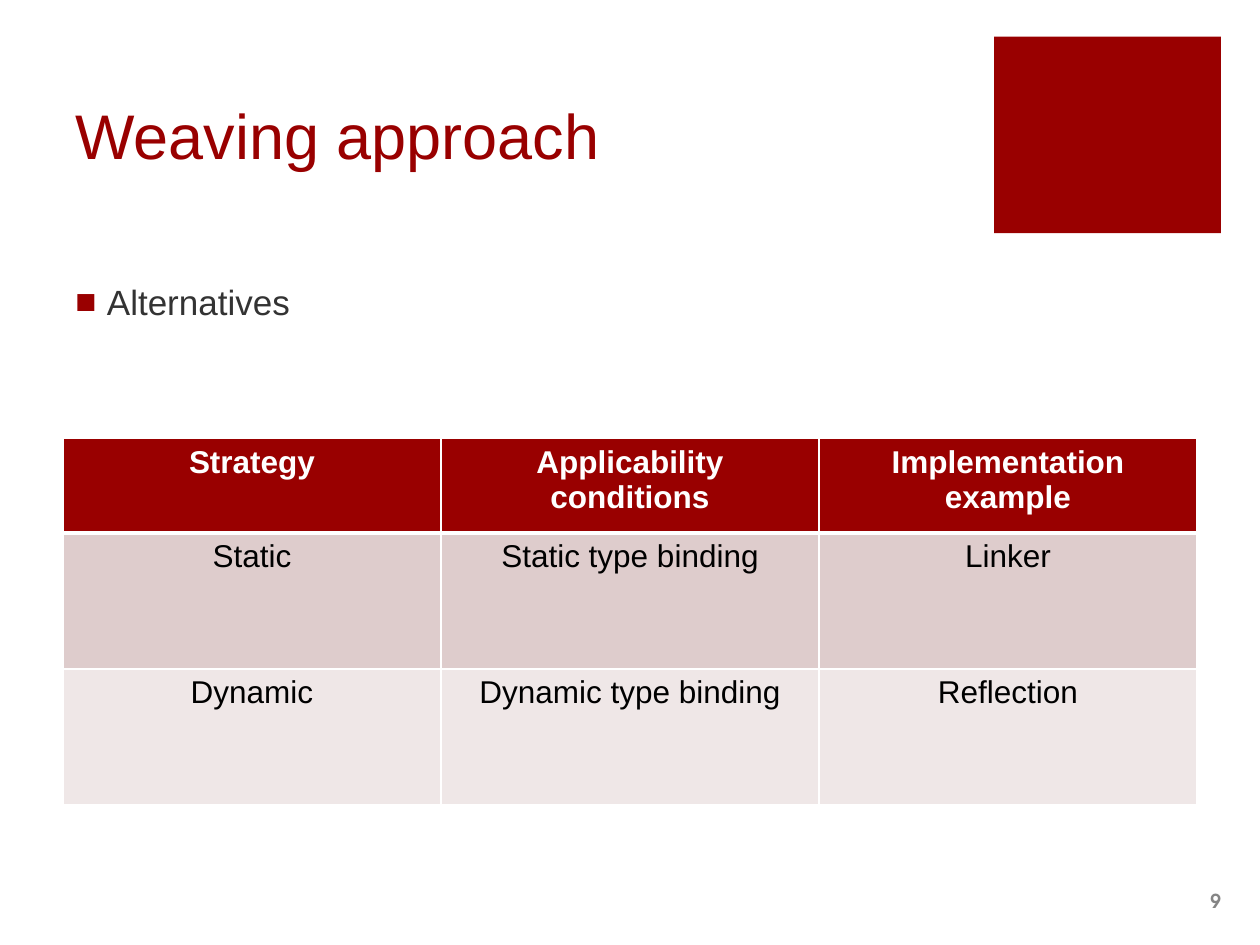
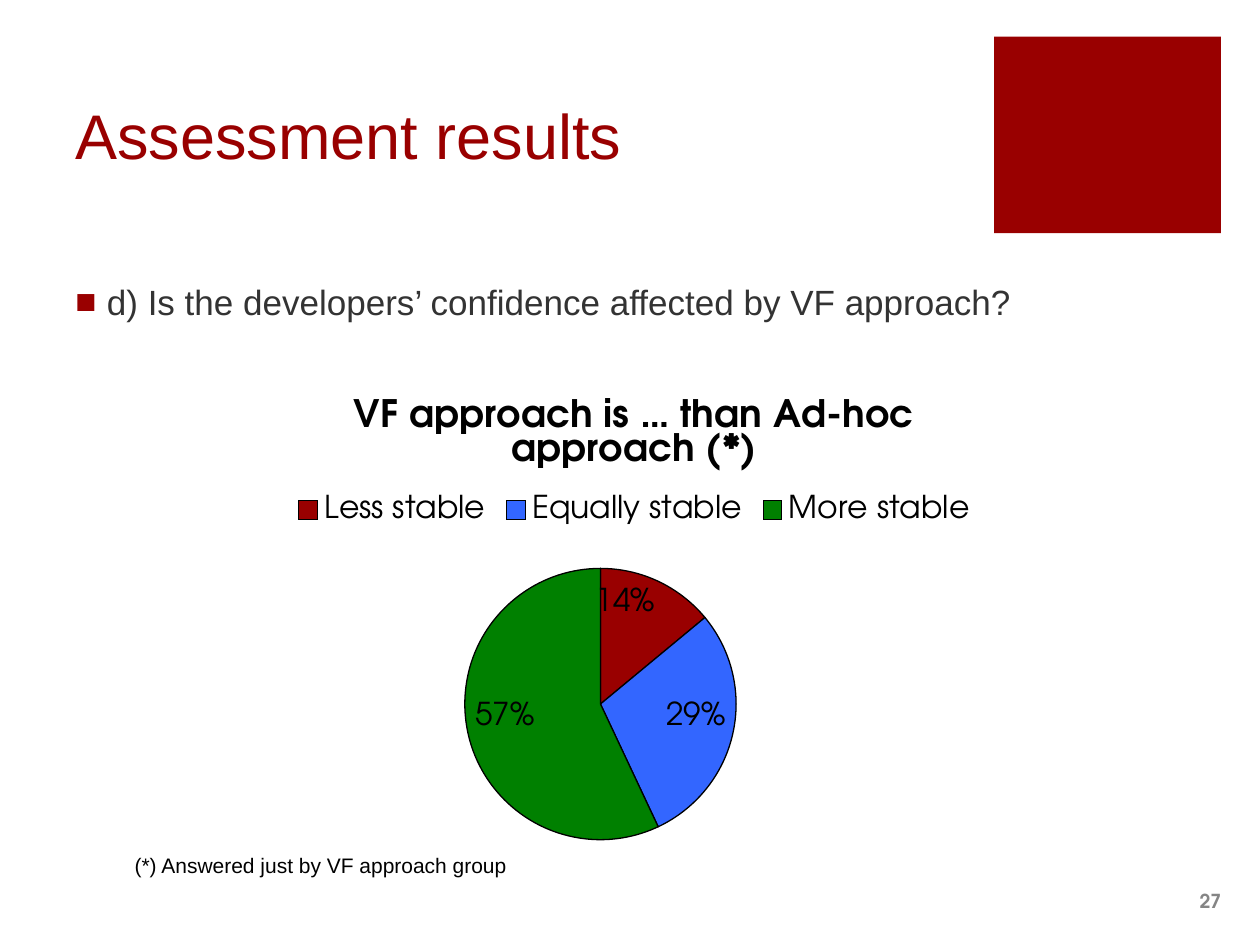
from lxml.etree import SubElement
from pptx import Presentation
from pptx.chart.data import CategoryChartData
from pptx.dml.color import RGBColor
from pptx.enum.chart import XL_CHART_TYPE, XL_LABEL_POSITION, XL_LEGEND_POSITION
from pptx.enum.shapes import MSO_SHAPE
from pptx.enum.text import MSO_ANCHOR, MSO_AUTO_SIZE, PP_ALIGN
from pptx.oxml import parse_xml
from pptx.oxml.ns import nsdecls, qn
from pptx.util import Inches, Pt

W, H = 10, 7.5
MARGIN = 0.5
TOP, BAND = 0.29, 1.56
COLORS = dict(red="990000", gray="333333", number="858585", white="FFFFFF", black="000000",
              dark_row="DECCCC", light_row="EFE7E7", blue="3366FF", green="008000")
SANS, ROUND = "Arial", "TeX Gyre Adventor"

WEAVING = dict(number="9", title="Weaving approach", bullet="Alternatives")
STRATEGIES = [
    ("Strategy", "Applicability conditions", "Implementation example"),
    ("Static", "Static type binding", "Linker"),
    ("Dynamic", "Dynamic type binding", "Reflection"),
]
ROW_HEIGHTS = (0.75, 1.08, 1.08)
ROW_FILLS = ("red", "dark_row", "light_row")

ASSESSMENT = dict(number="27", title="Assessment results",
                  bullet="d) Is the developers’ confidence affected by VF approach?")
CHART_TITLE = "VF approach is … than Ad-hoc approach (*)"
ANSWERS = [("Less stable", 14, "red"), ("Equally stable", 29, "blue"), ("More stable", 57, "green")]
PIE_AREA = dict(x=0.3, y=0.4, w=0.32, h=0.56)
FOOTNOTE = "(*) Answered just by VF approach group"


def rgb(name):
    return RGBColor.from_string(COLORS[name])


def style(font, size, color="black", face=SANS, bold=False):
    font.size, font.name, font.bold = Pt(size), face, bold
    font.color.rgb = rgb(color)


def write(tf, text, align=PP_ALIGN.LEFT, anchor=MSO_ANCHOR.TOP, wrap=True, **font):
    tf.word_wrap, tf.vertical_anchor = wrap, anchor
    p = tf.paragraphs[0]
    p.alignment = align
    r = p.add_run()
    r.text = text
    style(r.font, **font)
    return p


def add_text(s, box, text, **fmt):
    tf = s.shapes.add_textbox(*map(Inches, box)).text_frame
    return tf, write(tf, text, **fmt)


def add_bullet(p, color):
    pPr = p._p.get_or_add_pPr()
    pPr.set("marL", str(Inches(0.25)))
    pPr.set("indent", str(-Inches(0.25)))
    clr = SubElement(pPr, qn("a:buClr"))
    SubElement(clr, qn("a:srgbClr"), val=COLORS[color])
    SubElement(pPr, qn("a:buFont"), typeface=SANS)
    SubElement(pPr, qn("a:buChar"), char="■")


def add_page(prs, number, title, bullet):
    s = prs.slides.add_slide(prs.slide_layouts[6])
    add_text(s, (8.9, 6.95, 0.89, 0.4), number, align=PP_ALIGN.RIGHT,
             anchor=MSO_ANCHOR.MIDDLE, size=11, color="number", face=ROUND, bold=True)
    sp = s.shapes.add_shape(MSO_SHAPE.RECTANGLE, *map(Inches, (7.89, TOP, 1.8, BAND)))
    sp.shadow.inherit = False
    sp.fill.solid()
    sp.fill.fore_color.rgb = rgb("red")
    sp.line.fill.background()
    add_text(s, (MARGIN, TOP, 7.12, BAND), title, anchor=MSO_ANCHOR.MIDDLE, size=36, color="red")
    _, p = add_text(s, (MARGIN, 2.18, 9.19, 4.52), bullet, size=20, color="gray")
    add_bullet(p, "red")
    return s


def set_borders(cell, **widths):
    tcPr = cell._tc.get_or_add_tcPr()
    for i, side in enumerate("LRTB"):
        tcPr.insert(i, parse_xml(
            f'<a:ln{side} {nsdecls("a")} w="{Pt(widths.get(side, 1))}"><a:solidFill>'
            f'<a:srgbClr val="{COLORS["white"]}"/></a:solidFill></a:ln{side}>'))


def add_strategies(s):
    n = len(STRATEGIES[0])
    table = s.shapes.add_table(len(STRATEGIES), n, Inches(MARGIN), Inches(3.48),
                               Inches(W - 2 * MARGIN), Inches(sum(ROW_HEIGHTS))).table
    for i, (texts, height, fill) in enumerate(zip(STRATEGIES, ROW_HEIGHTS, ROW_FILLS)):
        table.rows[i].height = Inches(height)
        head = i == 0
        for j, text in enumerate(texts):
            cell = table.cell(i, j)
            cell.fill.solid()
            cell.fill.fore_color.rgb = rgb(fill)
            write(cell.text_frame, text, align=PP_ALIGN.CENTER, size=18, bold=head,
                  color="white" if head else "black")
            set_borders(cell, T=3 if i == 1 else 1, B=3 if head else 1)


def place_plot(chart):
    area = chart._chartSpace.chart.plotArea
    for old in area.findall(qn("c:layout")):
        area.remove(old)
    layout = parse_xml(f'<c:layout {nsdecls("c")}><c:manualLayout/></c:layout>')
    manual = layout[0]
    SubElement(manual, qn("c:layoutTarget"), val="inner")
    for key in "xy":
        SubElement(manual, qn(f"c:{key}Mode"), val="edge")
    for key, share in PIE_AREA.items():
        SubElement(manual, qn(f"c:{key}"), val=str(share))
    area.insert(0, layout)


def add_pie(s):
    data = CategoryChartData()
    data.categories = [name for name, _, _ in ANSWERS]
    data.add_series("Series 1", [value for _, value, _ in ANSWERS])
    chart = s.shapes.add_chart(XL_CHART_TYPE.PIE, *map(Inches, (1.67, 2.95, 6.73, 3.88)), data).chart
    style(chart.font, 18, face=ROUND)
    chart.has_title = True
    write(chart.chart_title.text_frame, CHART_TITLE, align=PP_ALIGN.CENTER,
          size=21.6, face=ROUND, bold=True)
    chart.chart_title.include_in_layout = False
    chart.has_legend = True
    chart.legend.position = XL_LEGEND_POSITION.TOP
    chart.legend.include_in_layout = False
    style(chart.legend.font, 18, face=ROUND)
    plot = chart.plots[0]
    plot.vary_by_categories = True
    for i, (_, _, color) in enumerate(ANSWERS):
        fmt = plot.series[0].points[i].format
        fmt.fill.solid()
        fmt.fill.fore_color.rgb = rgb(color)
        fmt.line.color.rgb = rgb("black")
        fmt.line.width = Pt(0.75)
    plot.has_data_labels = True
    labels = plot.data_labels
    labels.show_percentage, labels.show_value = True, False
    labels.number_format, labels.number_format_is_linked = "0%", False
    labels.position = XL_LABEL_POSITION.INSIDE_END
    style(labels.font, 18, face=ROUND)
    place_plot(chart)


def main():
    prs = Presentation()
    prs.slide_width, prs.slide_height = Inches(W), Inches(H)
    add_strategies(add_page(prs, **WEAVING))
    s = add_page(prs, **ASSESSMENT)
    add_pie(s)
    tf, _ = add_text(s, (0.97, 6.72, 3.19, 0.5), FOOTNOTE, wrap=False, size=12)
    tf.auto_size = MSO_AUTO_SIZE.SHAPE_TO_FIT_TEXT
    prs.save("out.pptx")


if __name__ == "__main__":
    main()
